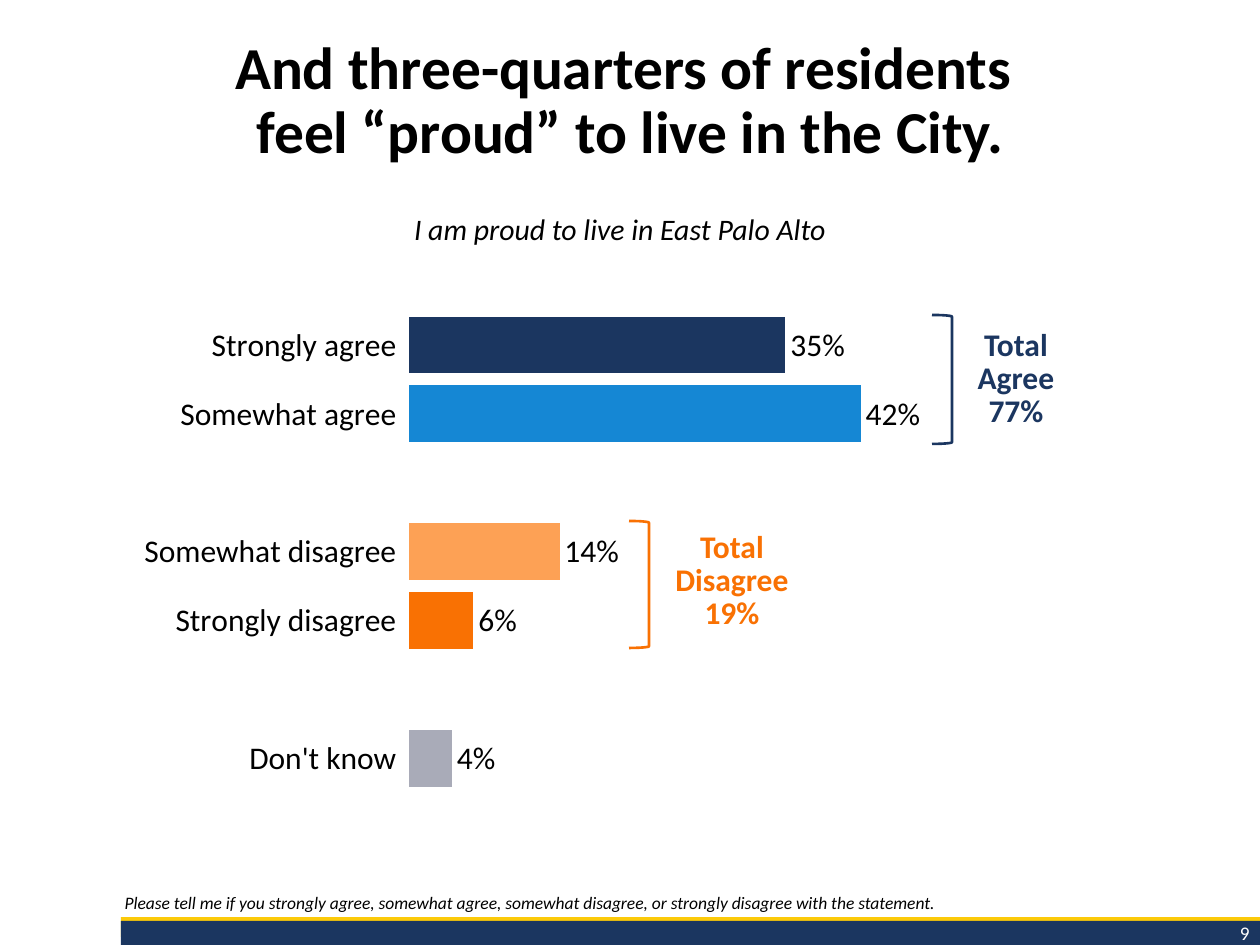
import pptx
import pptx.util
import pptx.chart.data
import pptx.dml.color
import pptx.enum.chart
import pptx.enum.shapes
import pptx.enum.text
import pptx.oxml

Pt = pptx.util.Pt
RGBColor = pptx.dml.color.RGBColor
Align = pptx.enum.text.PP_ALIGN
Anchor = pptx.enum.text.MSO_ANCHOR
Shape = pptx.enum.shapes.MSO_SHAPE

BLACK = RGBColor(0x00, 0x00, 0x00)
WHITE = RGBColor(0xFF, 0xFF, 0xFF)
NAVY = RGBColor(0x1B, 0x36, 0x60)
BLUE = RGBColor(0x15, 0x87, 0xD4)
PEACH = RGBColor(0xFD, 0xA1, 0x55)
ORANGE = RGBColor(0xF9, 0x71, 0x03)
GREY = RGBColor(0xA9, 0xAB, 0xB8)
GOLD = RGBColor(0xFC, 0xCA, 0x09)
FONT = "Calibri"
SCALE = 914400 / 126


def px(*lengths):
    return [round(length * SCALE) for length in lengths]


def write(box, lines, size, color, align, bold=False, italic=False, spacing=None):
    box.text_frame.word_wrap = True
    para = box.text_frame.paragraphs[0]
    para.alignment = align
    para.space_before = Pt(0)
    para.line_spacing = spacing
    for index, line in enumerate(lines):
        if index:
            para.add_line_break()
        span = para.add_run()
        span.text = line
        span.font.name = FONT
        span.font.size = Pt(size)
        span.font.color.rgb = color
        span.font.bold = bold
        span.font.italic = italic


deck = pptx.Presentation()
deck.slide_width, deck.slide_height = px(1260, 945)
page = deck.slides.add_slide(deck.slide_layouts[1])

for bounds, color in [((121, 917, 1139, 20), GOLD), ((121, 921, 1139, 24), NAVY)]:
    band = page.shapes.add_shape(Shape.RECTANGLE, *px(*bounds))
    band.shadow.inherit = False
    band.fill.solid()
    band.fill.fore_color.rgb = color
    band.line.fill.background()

number = page.shapes.add_textbox(*px(1076, 915, 186, 36))
write(number, ["9"], 11, WHITE, Align.RIGHT)

title = page.shapes.title
title.left, title.top, title.width, title.height = px(0, 25, 1260, 154)
title.text_frame.vertical_anchor = Anchor.MIDDLE
title.text_frame.auto_size = pptx.enum.text.MSO_AUTO_SIZE.NONE
write(title, ["And three-quarters of residents ", "feel “proud” to live in the City."],
      34, BLACK, Align.CENTER, bold=True, spacing=0.9)

question = page.placeholders[1]
question.left, question.top, question.width, question.height = px(112, 852, 1145, 68)
question.text_frame.vertical_anchor = Anchor.BOTTOM
question.text_frame.auto_size = pptx.enum.text.MSO_AUTO_SIZE.NONE
properties = question.text_frame.paragraphs[0]._p.get_or_add_pPr()
properties.set("marL", "0")
properties.set("indent", "0")
properties.append(pptx.oxml.parse_xml(
    '<a:buNone xmlns:a="http://schemas.openxmlformats.org/drawingml/2006/main"/>'))
write(question, ["Please tell me if you strongly agree, somewhat agree, somewhat disagree, "
                 "or strongly disagree with the statement."],
      10, BLACK, Align.LEFT, italic=True, spacing=0.9)

statement = page.shapes.add_textbox(*px(-5, 205, 1257, 49))
write(statement, ["I am proud to live in East Palo Alto "], 17, BLACK, Align.CENTER, italic=True)

answers = [
    ("Strongly agree", 0.35, NAVY),
    ("Somewhat agree", 0.42, BLUE),
    ("", None, None),
    ("Somewhat disagree", 0.14, PEACH),
    ("Strongly disagree", 0.06, ORANGE),
    ("", None, None),
    ("Don't know", 0.04, GREY),
]
data = pptx.chart.data.CategoryChartData(number_format="0%")
data.categories = [name for name, share, color in answers]
data.add_series("Series 1", [share for name, share, color in answers])
chart = page.shapes.add_chart(
    pptx.enum.chart.XL_CHART_TYPE.BAR_CLUSTERED, *px(95, 300, 1121, 530), data).chart
chart.has_legend = False
chart.has_title = False
chart.font.name = FONT
chart.font.size = Pt(18)
chart.font.color.rgb = BLACK

chart.category_axis.reverse_order = True
chart.category_axis.format.line.fill.background()
chart.category_axis.has_major_gridlines = False
chart.value_axis.visible = False
chart.value_axis.has_major_gridlines = False
chart.value_axis.minimum_scale = 0
chart.value_axis.maximum_scale = 0.75
chart.value_axis.major_unit = 0.15

plot = chart.plots[0]
plot.gap_width = 21
plot.vary_by_categories = False
plot.has_data_labels = True
labels = plot.data_labels
labels.show_value = True
labels.number_format = "0%"
labels.number_format_is_linked = False
labels.position = pptx.enum.chart.XL_LABEL_POSITION.OUTSIDE_END
labels.font.name = FONT
labels.font.size = Pt(18)
labels.font.color.rgb = BLACK
for index, (name, share, color) in enumerate(answers):
    if share is not None:
        fill = plot.series[0].points[index].format.fill
        fill.solid()
        fill.fore_color.rgb = color

plot_area = chart._chartSpace.chart.plotArea
for layout in plot_area.findall(pptx.oxml.ns.qn("c:layout")):
    plot_area.remove(layout)
plot_area.insert(0, pptx.oxml.parse_xml(
    '<c:layout xmlns:c="http://schemas.openxmlformats.org/drawingml/2006/chart">'
    '<c:manualLayout><c:layoutTarget val="inner"/>'
    '<c:xMode val="edge"/><c:yMode val="edge"/>'
    '<c:x val="0.28"/><c:y val="0.02"/><c:w val="0.72"/><c:h val="0.91"/>'
    '</c:manualLayout></c:layout>'))

totals = [
    ((932, 315, 20, 129), (934, 323, 164, 113), ["Total Agree", "77%"], NAVY),
    ((629, 521, 20, 127), (631, 525, 202, 113), ["Total Disagree", "19%"], ORANGE),
]
for bracket_bounds, label_bounds, lines, color in totals:
    bracket = page.shapes.add_shape(Shape.RIGHT_BRACKET, *px(*bracket_bounds))
    bracket.shadow.inherit = False
    bracket.fill.background()
    bracket.line.color.rgb = color
    bracket.line.width = Pt(1.5)
    label = page.shapes.add_textbox(*px(*label_bounds))
    write(label, lines, 18, color, Align.CENTER, bold=True, spacing=Pt(19))

deck.save("out.pptx")
